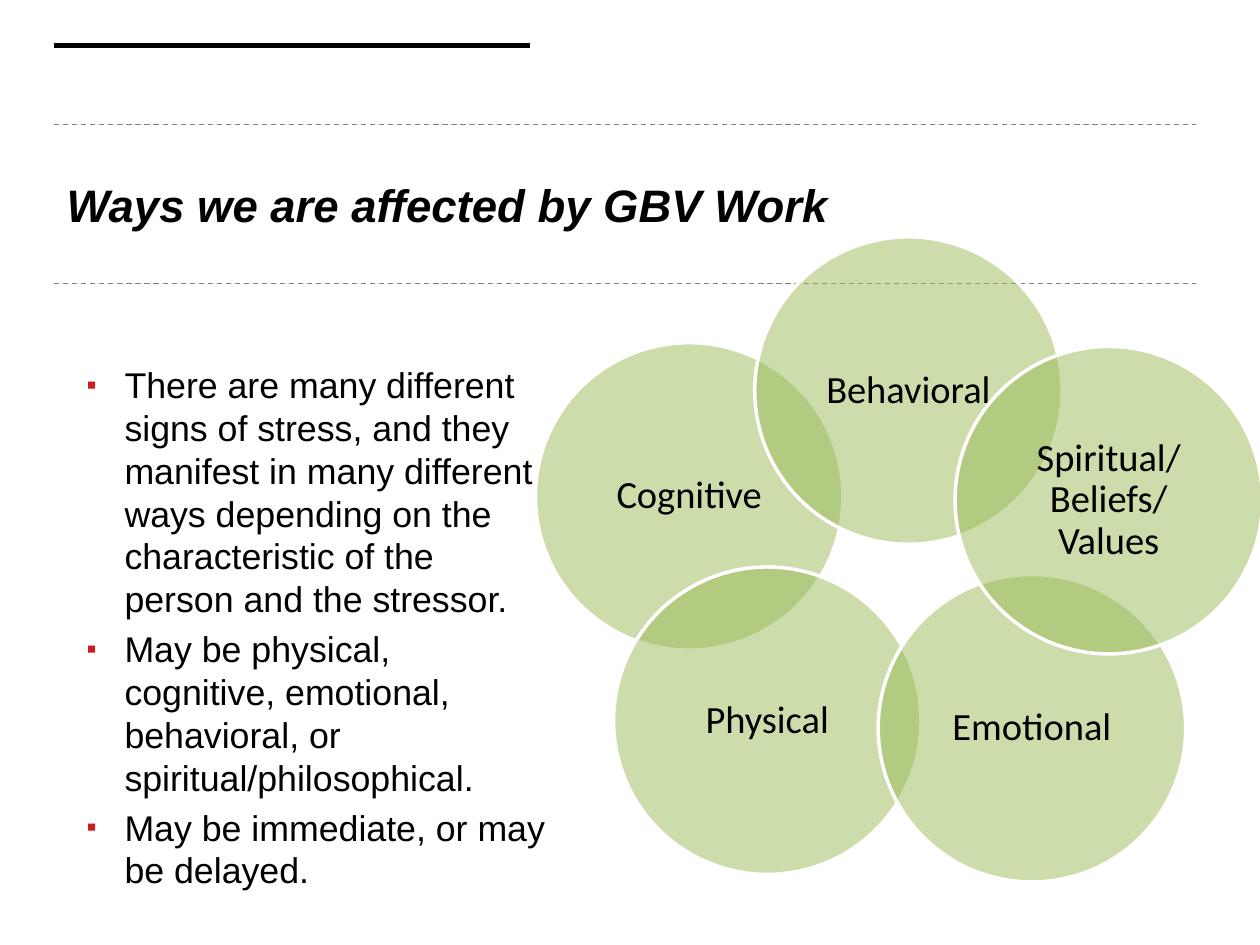
from lxml import etree
from pptx import Presentation
from pptx.dml.color import RGBColor
from pptx.enum.dml import MSO_LINE
from pptx.enum.shapes import MSO_CONNECTOR, MSO_SHAPE
from pptx.enum.text import MSO_ANCHOR, PP_ALIGN
from pptx.oxml.ns import qn
from pptx.util import Inches, Pt

STRAIGHT = MSO_CONNECTOR.STRAIGHT
ELLIPSE = MSO_SHAPE.OVAL
DASH = MSO_LINE.DASH
TOP, MIDDLE = MSO_ANCHOR.TOP, MSO_ANCHOR.MIDDLE
LEFT, CENTER = PP_ALIGN.LEFT, PP_ALIGN.CENTER

BLACK, WHITE, GRAY = "000000", "FFFFFF", "808080"
GREEN, RED = "9BBB59", "CF1C21"

TITLE = "Ways we are affected by GBV Work"
POINTS = [
    "There are many different signs of stress, and they manifest in many "
    "different ways depending on the characteristic of the person and the stressor.",
    "May be physical, cognitive, emotional, behavioral, or spiritual/philosophical.",
    "May be immediate, or may be delayed.",
]
DIAMETER = 2.44
EFFECTS = [
    ("Cognitive", 0, 0.84),
    ("Physical", 0.62, 2.62),
    ("Behavioral", 1.74, 0),
    ("Emotional", 2.72, 2.68),
    ("Spiritual/ Beliefs/ Values", 3.33, 0.87),
]


def color(hex_string):
    """Return the colour for a hex string."""
    return RGBColor.from_string(hex_string)


def add_bullet(paragraph, indent=0.3):
    """Give a paragraph a hanging red square bullet."""
    properties = paragraph._p.get_or_add_pPr()
    properties.set("marL", str(Inches(indent)))
    properties.set("indent", str(-Inches(indent)))
    bullet_color = etree.SubElement(properties, qn("a:buClr"))
    etree.SubElement(bullet_color, qn("a:srgbClr"), val=RED)
    etree.SubElement(properties, qn("a:buSzPct"), val="80000")
    etree.SubElement(properties, qn("a:buFont"), typeface="Arial")
    etree.SubElement(properties, qn("a:buChar"), char="▪")


def write_text(shape, texts, font="Arial", size=20, bold=False, italic=False,
               align=LEFT, anchor=TOP, bullets=False, gap=0, line_spacing=None,
               margin=None):
    """Fill a shape with one formatted paragraph per text."""
    frame = shape.text_frame
    frame.word_wrap = True
    frame.vertical_anchor = anchor
    if margin is not None:
        frame.margin_left = frame.margin_right = Inches(margin)
        frame.margin_top = frame.margin_bottom = Inches(margin)
    for index, text in enumerate(texts):
        paragraph = frame.add_paragraph() if index else frame.paragraphs[0]
        if bullets:
            add_bullet(paragraph)
        paragraph.alignment = align
        paragraph.line_spacing = line_spacing
        if index:
            paragraph.space_before = Pt(gap)
        run = paragraph.add_run()
        run.text = text
        run.font.name = font
        run.font.size = Pt(size)
        run.font.bold = bold
        run.font.italic = italic
        run.font.color.rgb = color(BLACK)


def add_rule(slide, left, top, width, line_color, weight, dash=None):
    """Draw a horizontal rule."""
    rule = slide.shapes.add_connector(
        STRAIGHT, Inches(left), Inches(top), Inches(left + width), Inches(top))
    rule.line.color.rgb = color(line_color)
    rule.line.width = Pt(weight)
    if dash is not None:
        rule.line.dash_style = dash
    etree.SubElement(rule._element.spPr, qn("a:effectLst"))


def add_title(slide, left, top, width, height):
    """Place the title between dashed rules, under a short heavy rule."""
    add_rule(slide, left, top - 0.63, 3.78, BLACK, 3)
    for rule_top in (top, top + height):
        add_rule(slide, left, rule_top, width, GRAY, 0.75, DASH)
    box = slide.shapes.add_textbox(
        Inches(left), Inches(top), Inches(width), Inches(height))
    write_text(box, [TITLE], size=26, bold=True, italic=True, anchor=MIDDLE)


def add_points(slide, left, top, width, height):
    """Place the bulleted list."""
    box = slide.shapes.add_textbox(
        Inches(left), Inches(top), Inches(width), Inches(height))
    write_text(box, POINTS, size=20.4, bullets=True, gap=4)


def add_effects(slide, left, top):
    """Place the ring of overlapping translucent circles."""
    for label, offset_x, offset_y in EFFECTS:
        circle = slide.shapes.add_shape(
            ELLIPSE, Inches(left + offset_x), Inches(top + offset_y),
            Inches(DIAMETER), Inches(DIAMETER))
        circle.shadow.inherit = False
        circle.fill.solid()
        circle.fill.fore_color.rgb = color(GREEN)
        fill_color = circle._element.spPr.find(qn("a:solidFill"))[0]
        etree.SubElement(fill_color, qn("a:alpha"), val="50000")
        circle.line.color.rgb = color(WHITE)
        circle.line.width = Pt(2)
        write_text(circle, [label], font="Calibri", size=22, align=CENTER,
                   anchor=MIDDLE, line_spacing=0.9, margin=0.09)


def main():
    """Build and save the slide."""
    presentation = Presentation()
    presentation.slide_width = Inches(10)
    presentation.slide_height = Inches(7.5)
    slide = presentation.slides.add_slide(presentation.slide_layouts[6])
    add_title(slide, 0.43, 0.99, 9.06, 1.26)
    add_points(slide, 0.59, 2.83, 3.87, 3.93)
    add_effects(slide, 4.25, 1.88)
    presentation.save("out.pptx")


if __name__ == "__main__":
    main()
